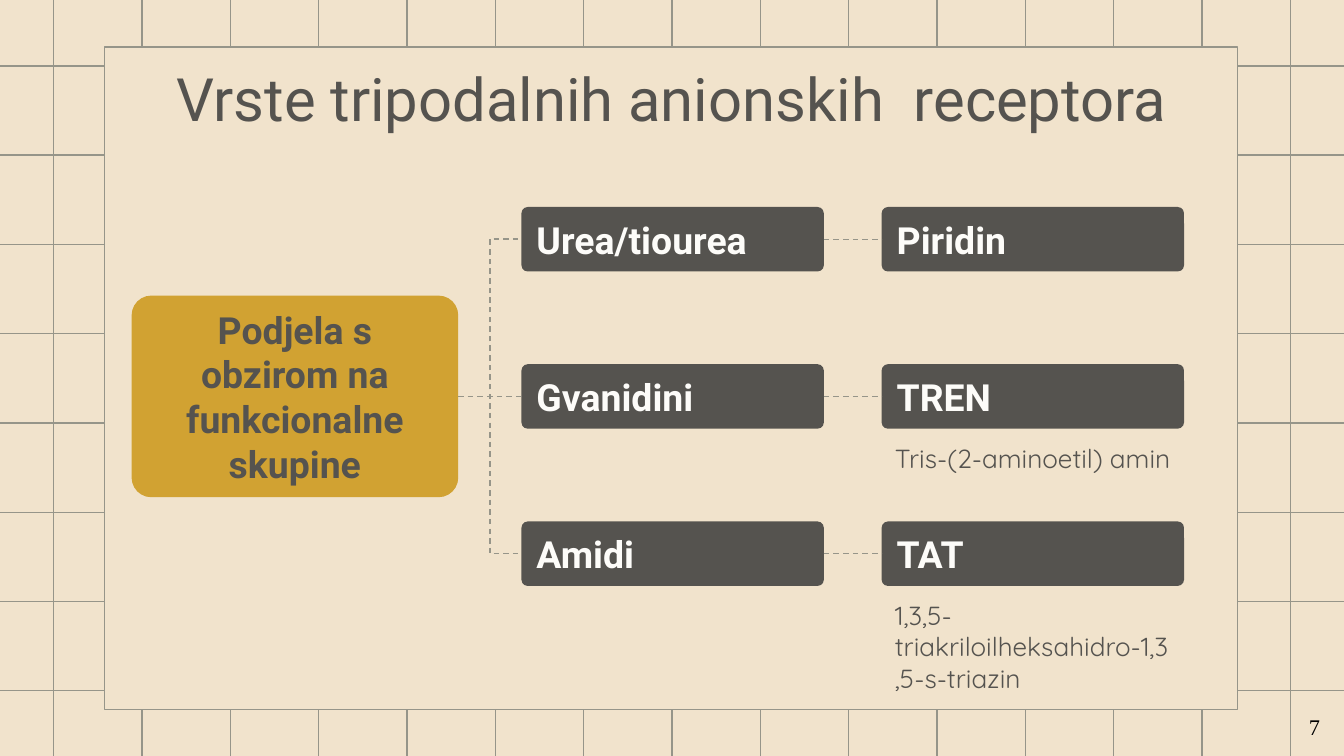
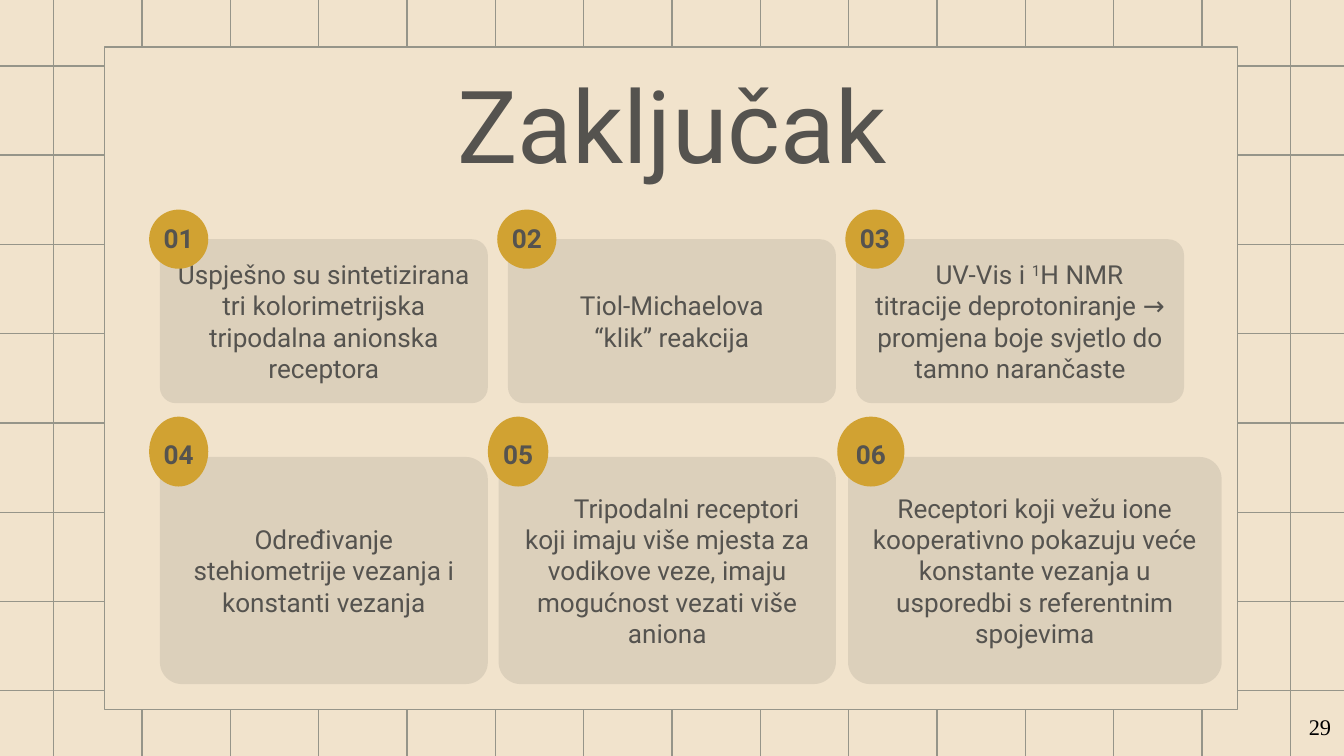
from dataclasses import dataclass

from lxml import etree
from pptx import Presentation
from pptx import util as u
from pptx.dml import color
from pptx.enum import dml, shapes, text
from pptx.oxml import ns


@dataclass(frozen=True)
class Theme:
    paper: str = "F1E3CC"
    rule: str = "969589"
    ink: str = "55534F"
    accent: str = "D1A232"
    light: str = "FDFCF9"
    black: str = "000000"
    font: str = "Roboto"
    note_font: str = "Quicksand"
    number_font: str = "Times New Roman"
    title: int = 32
    big_title: int = 54
    heading: int = 20
    body: int = 14
    number: int = 12
    rule_width: float = 0.75
    corner: float = 0.097
    card_alpha: int = 13


def rgb(value):
    return color.RGBColor.from_string(value)


def inches(*values):
    return [u.Inches(value) for value in values]


class Deck:
    """Holds the style, the presentation and the current slide."""

    def __init__(self, theme):
        self.theme = theme
        self.file = Presentation()
        self.file.slide_width, self.file.slide_height = inches(10, 5.625)
        self.layout = self.file.slide_layouts[5]
        self.slide = None

    def new_slide(self, title, size, number, number_width, title_at):
        first = self.slide is None
        self.slide = self.file.slides.add_slide(self.layout)
        if first:
            self.backdrop()
        box = self.slide.shapes.title
        box.left, box.top, box.width, box.height = inches(*title_at)
        self.set_text(box, [title], size, anchor=text.MSO_ANCHOR.TOP)
        self.page_number(number, number_width)

    def backdrop(self):
        """Draws the grid and panel, then hands them to the shared layout."""
        fill = self.layout.background.fill
        fill.solid()
        fill.fore_color.rgb = rgb(self.theme.paper)
        columns, rows = 15, 8
        parts = []
        for i in range(columns):
            x = 0.4 + i * 9.2 / (columns - 1)
            parts.append(self.line((x, -0.04), (x, 5.67)))
        for i in range(rows):
            y = 0.49 + i * 4.65 / (rows - 1)
            parts.append(self.line((0, y), (10, y)))
        panel = self.shape(shapes.MSO_SHAPE.RECTANGLE, (0.78, 0.35, 8.43, 4.93),
                           self.theme.paper)
        self.stroke(panel)
        parts.append(panel)
        for number, part in enumerate(parts, start=100):
            part.element.xpath(".//p:cNvPr")[0].set("id", str(number))
            self.layout.shapes.element.append(part.element)

    def stroke(self, item):
        item.line.color.rgb = rgb(self.theme.rule)
        item.line.width = u.Pt(self.theme.rule_width)

    def line(self, start=(0, 0), end=(0, 0), kind=shapes.MSO_CONNECTOR.STRAIGHT):
        item = self.slide.shapes.add_connector(kind, *inches(*start, *end))
        self.stroke(item)
        etree.SubElement(item.element.spPr, ns.qn("a:effectLst"))
        return item

    def link(self, source, target, kind=shapes.MSO_CONNECTOR.STRAIGHT):
        """Dashed connector from the right side of a box to the left of another."""
        item = self.line(kind=kind)
        item.begin_connect(source, 3)
        item.end_connect(target, 1)
        item.line.dash_style = dml.MSO_LINE.DASH

    def shape(self, kind, at, fill, alpha=None):
        item = self.slide.shapes.add_shape(kind, *inches(*at))
        item.shadow.inherit = False
        item.fill.solid()
        item.fill.fore_color.rgb = rgb(fill)
        item.line.fill.background()
        if kind == shapes.MSO_SHAPE.ROUNDED_RECTANGLE:
            item.adjustments[0] = self.theme.corner
        if alpha:
            tint = item.element.spPr.find(".//" + ns.qn("a:srgbClr"))
            etree.SubElement(tint, ns.qn("a:alpha"), val=str(alpha * 1000))
        return item

    def rounded(self, at, fill, alpha=None):
        return self.shape(shapes.MSO_SHAPE.ROUNDED_RECTANGLE, at, fill, alpha)

    def text_box(self, at, lines, size, **style):
        box = self.slide.shapes.add_textbox(*inches(*at))
        self.set_text(box, lines, size, **style)
        return box

    def set_text(self, box, lines, size, ink=None, font=None, bold=False,
                 align=text.PP_ALIGN.CENTER, anchor=text.MSO_ANCHOR.MIDDLE, indent=0):
        """Each line is a string, or a list of strings whose odd items are raised."""
        frame = box.text_frame
        frame.word_wrap = True
        frame.auto_size = text.MSO_AUTO_SIZE.NONE
        frame.vertical_anchor = anchor
        frame.margin_left = frame.margin_right = u.Inches(0.1)
        frame.margin_top = frame.margin_bottom = u.Inches(0.1)
        for i, line in enumerate(lines):
            para = frame.add_paragraph() if i else frame.paragraphs[0]
            para.alignment = align
            if indent:
                para._p.get_or_add_pPr().set("indent", str(u.Inches(indent)))
            for j, piece in enumerate([line] if isinstance(line, str) else line):
                span = para.add_run()
                span.text = piece
                span.font.size = u.Pt(size)
                span.font.name = font or self.theme.font
                span.font.bold = bold
                span.font.color.rgb = rgb(ink or self.theme.ink)
                if j % 2:
                    span._r.get_or_add_rPr().set("baseline", "30000")

    def page_number(self, number, width):
        theme = self.theme
        box = self.text_box((9.64, 5.26, width, 0.3), [number], theme.number,
                            ink=theme.black, font=theme.number_font,
                            align=text.PP_ALIGN.LEFT, anchor=text.MSO_ANCHOR.TOP)
        frame = box.text_frame
        frame.margin_top = frame.margin_bottom = u.Inches(0.05)
        frame.word_wrap = False
        frame.auto_size = text.MSO_AUTO_SIZE.SHAPE_TO_FIT_TEXT

    def group_box(self, left, top, label):
        box = self.rounded((left, top, 2.25, 0.48), self.theme.ink)
        self.set_text(box, [label], self.theme.heading, ink=self.theme.light,
                      bold=True, align=text.PP_ALIGN.LEFT)
        return box

    def note(self, left, top, line):
        self.text_box((left, top, 2.25, 0.6), [line], self.theme.body,
                      font=self.theme.note_font, align=text.PP_ALIGN.LEFT,
                      anchor=text.MSO_ANCHOR.TOP)

    def card(self, number, lines, at, badge, label_height, indent=0):
        theme = self.theme
        box = self.rounded(at, theme.ink, theme.card_alpha)
        self.set_text(box, lines, theme.body, indent=indent)
        left, top, width, height = badge
        self.shape(shapes.MSO_SHAPE.OVAL, badge, theme.accent)
        self.text_box((left, top + 0.04, width, label_height), [number],
                      theme.body, bold=True)


def receptor_types(deck):
    theme = deck.theme
    deck.new_slide("Vrste tripodalnih anionskih  receptora", theme.title, "7", 0.29,
                   (0.53, 0.36, 8.94, 0.65))

    # Root of the tree
    root = deck.rounded((0.98, 2.2, 2.43, 1.5), theme.accent)
    deck.set_text(root, ["Podjela s obzirom na funkcionalne skupine"],
                  theme.heading, bold=True)

    # One row per pair of groups, with an optional note below the right one
    rows = [
        ("Urea/tiourea", "Piridin", None),
        ("Gvanidini", "TREN", "Tris-(2-aminoetil) amin"),
        ("Amidi", "TAT", "1,3,5- triakriloilheksahidro-1,3,5-s-triazin"),
    ]
    for i, (left_label, right_label, note) in enumerate(rows):
        top = 1.54 + 1.17 * i
        near = deck.group_box(3.88, top, left_label)
        far = deck.group_box(6.56, top, right_label)
        if note:
            deck.note(6.56, top + 0.48, note)
        straight = i == 1
        deck.link(root, near, shapes.MSO_CONNECTOR.STRAIGHT if straight
                  else shapes.MSO_CONNECTOR.ELBOW)
        deck.link(near, far)


def conclusion(deck):
    deck.new_slide("Zaključak", deck.theme.big_title, "29", 0.37,
                   (0.78, 0.37, 8.44, 0.65))

    # Card rows: top, height, badge top, badge height, label height
    upper = (1.78, 1.22, 1.56, 0.44, 0.34)
    lower = (3.4, 1.69, 3.1, 0.52, 0.48)

    # Cards: row, left, width, badge width, first-line indent, text
    cards = [
        (upper, 1.19, 2.44, 0.44, 0,
         ["Uspješno su sintetizirana tri kolorimetrijska tripodalna anionska receptora"]),
        (upper, 3.78, 2.44, 0.44, 0, ["Tiol-Michaelova", "“klik” reakcija"]),
        (upper, 6.37, 2.44, 0.44, 0.14,
         [["UV-Vis i ", "1", "H NMR titracije deprotoniranje → promjena boje "
           "svjetlo do tamno narančaste"]]),
        (lower, 1.19, 2.44, 0.44, 0,
         ["Određivanje stehiometrije vezanja i konstanti vezanja"]),
        (lower, 3.71, 2.51, 0.45, 0.29,
         ["Tripodalni receptori koji imaju više mjesta za vodikove veze, "
          "imaju mogućnost vezati više aniona"]),
        (lower, 6.31, 2.78, 0.5, 0,
         ["Receptori koji vežu ione kooperativno pokazuju veće konstante vezanja "
          "u usporedbi s referentnim spojevima"]),
    ]
    for i, (row, left, width, badge_width, indent, lines) in enumerate(cards, start=1):
        top, height, badge_top, badge_height, label_height = row
        deck.card(f"{i:02d}", lines, (left, top, width, height),
                  (left - 0.08, badge_top, badge_width, badge_height),
                  label_height, indent)


def main():
    deck = Deck(Theme())
    receptor_types(deck)
    conclusion(deck)
    deck.file.save("out.pptx")


if __name__ == "__main__":
    main()
